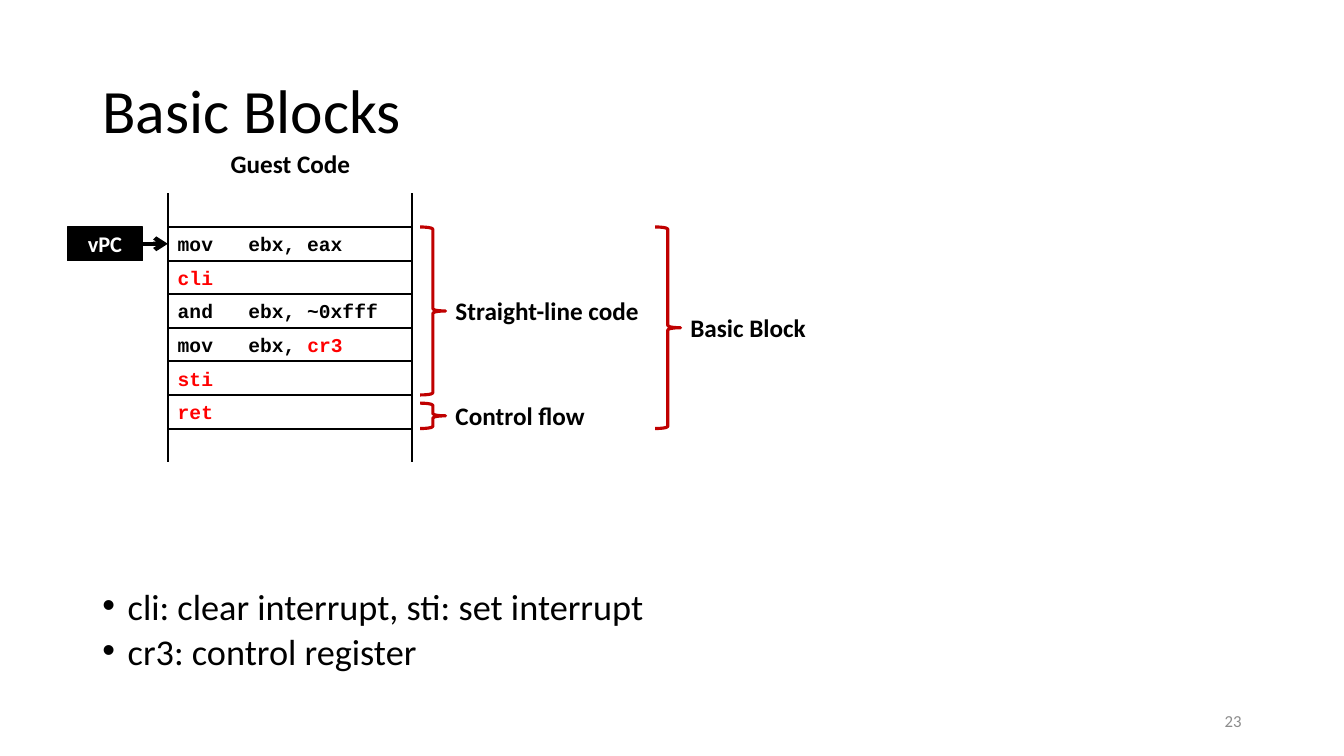
from lxml import etree
from pptx import Presentation
from pptx import util as u
from pptx.dml.color import RGBColor
from pptx.enum import shapes, text
from pptx.oxml import ns

COLORS = {"black": "000000", "white": "FFFFFF", "code": "FF0000", "brace": "C00000", "number": "8C8C8C"}
CODE = [
    [("mov\tebx, eax", "black")],
    [("cli", "code")],
    [("and\tebx, ~0xfff", "black")],
    [("mov\tebx, ", "black"), ("cr3", "code")],
    [("sti", "code")],
    [("ret", "code")],
]
NOTES = ["cli: clear interrupt, sti: set interrupt", "cr3: control register"]
LEFT, TOP, WIDTH, ROW = 4.23, 5.72, 6.15, 5.08 / 6
BRACE_WIDTH = 0.64


def color(name):
    return RGBColor.from_string(COLORS[name])


def style(r, size, name="black", bold=False, font="Calibri"):
    r.font.size = u.Pt(size)
    r.font.name = font
    r.font.bold = bold
    r.font.color.rgb = color(name)


def add_text(s, content, x, y, w, h, size, name="black", bold=False,
             align=text.PP_ALIGN.LEFT, anchor=text.MSO_ANCHOR.TOP, wrap=True):
    sp = s.shapes.add_textbox(u.Cm(x), u.Cm(y), u.Cm(w), u.Cm(h))
    tf = sp.text_frame
    tf.word_wrap = wrap
    tf.vertical_anchor = anchor
    tf.text = content
    for p in tf.paragraphs:
        p.alignment = align
        for r in p.runs:
            style(r, size, name, bold)
    return tf


def add_label(s, content, x, y, w, align=text.PP_ALIGN.LEFT):
    add_text(s, content, x, y, w, 1.02, 18, bold=True, align=align, wrap=False)


def add_box(s, x, y, w, fill, line_width):
    sp = s.shapes.add_shape(shapes.MSO_SHAPE.RECTANGLE, u.Cm(x), u.Cm(y), u.Cm(w), u.Cm(ROW))
    sp.shadow.inherit = False
    sp.fill.solid()
    sp.fill.fore_color.rgb = color(fill)
    sp.line.color.rgb = color("black")
    sp.line.width = u.Pt(line_width)
    sp.text_frame.vertical_anchor = text.MSO_ANCHOR.MIDDLE
    return sp.text_frame


def add_code_row(s, i, parts):
    p = add_box(s, LEFT, TOP + i * ROW, WIDTH, "white", 1.5).paragraphs[0]
    p.alignment = text.PP_ALIGN.LEFT
    tabs = etree.SubElement(p._p.get_or_add_pPr(), ns.qn("a:tabLst"))
    etree.SubElement(tabs, ns.qn("a:tab"), pos=str(u.Cm(1.78)), algn="l")
    for content, name in parts:
        r = p.add_run()
        r.text = content
        style(r, 14, name, True, "Courier New")


def add_line(s, x1, y1, x2, y2, width, arrow=False):
    c = s.shapes.add_connector(shapes.MSO_CONNECTOR.STRAIGHT, u.Cm(x1), u.Cm(y1), u.Cm(x2), u.Cm(y2))
    c.line.color.rgb = color("black")
    c.line.width = u.Pt(width)
    if arrow:
        etree.SubElement(c.line._get_or_add_ln(), ns.qn("a:tailEnd"), type="arrow")
    etree.SubElement(c._element.spPr, ns.qn("a:effectLst"))


def add_brace(s, label, x, y, h, label_y, label_width):
    sp = s.shapes.add_shape(shapes.MSO_SHAPE.RIGHT_BRACE, u.Cm(x), u.Cm(y), u.Cm(BRACE_WIDTH), u.Cm(h))
    sp.shadow.inherit = False
    sp.fill.background()
    sp.line.color.rgb = color("brace")
    sp.line.width = u.Pt(2.25)
    add_label(s, label, x + BRACE_WIDTH, label_y, label_width)


def add_bullets(s, items):
    tf = add_text(s, "\n".join(items), 2.33, 14.91, 29.21, 2.26, 25.9)
    for p in tf.paragraphs:
        p.line_spacing = 0.7
        p.space_before = u.Pt(10)
        pPr = p._p.get_or_add_pPr()
        pPr.set("marL", str(u.Cm(0.64)))
        pPr.set("indent", str(-u.Cm(0.64)))
        etree.SubElement(pPr, ns.qn("a:buFont"), typeface="Arial")
        etree.SubElement(pPr, ns.qn("a:buChar"), char="•")


def main():
    prs = Presentation()
    prs.slide_width, prs.slide_height = u.Cm(33.87), u.Cm(19.05)
    s = prs.slides.add_slide(prs.slide_layouts[6])

    title = add_text(s, "Basic Blocks", 2.33, 1.01, 29.21, 3.68, 44, anchor=text.MSO_ANCHOR.MIDDLE)
    title.paragraphs[0].line_spacing = 0.9
    add_text(s, "23", 23.92, 17.66, 7.62, 1.01, 12, "number",
             align=text.PP_ALIGN.RIGHT, anchor=text.MSO_ANCHOR.MIDDLE)

    add_line(s, 3.6, TOP + ROW / 2, LEFT, TOP + ROW / 2, 3, arrow=True)
    tf = add_box(s, 1.69, TOP, 1.91, "black", 0.75)
    tf.word_wrap = False
    tf.text = "vPC"
    p = tf.paragraphs[0]
    p.alignment = text.PP_ALIGN.CENTER
    style(p.runs[0], 16, "white", True)

    for i, parts in enumerate(CODE):
        add_code_row(s, i, parts)
    for x in (LEFT, LEFT + WIDTH):
        add_line(s, x, TOP - ROW, x, TOP + (len(CODE) + 1) * ROW, 1.5)

    add_label(s, "Guest Code", 5.54, 3.61, 3.56, text.PP_ALIGN.CENTER)
    add_brace(s, "Straight-line code", 10.59, TOP, 5 * ROW, 7.32, 5.18)
    add_brace(s, "Control flow", 10.59, 10.16, 0.64, 9.96, 3.81)
    add_brace(s, "Basic Block", 16.51, TOP, 6 * ROW, 7.75, 3.45)
    add_bullets(s, NOTES)
    prs.save("out.pptx")


if __name__ == "__main__":
    main()
